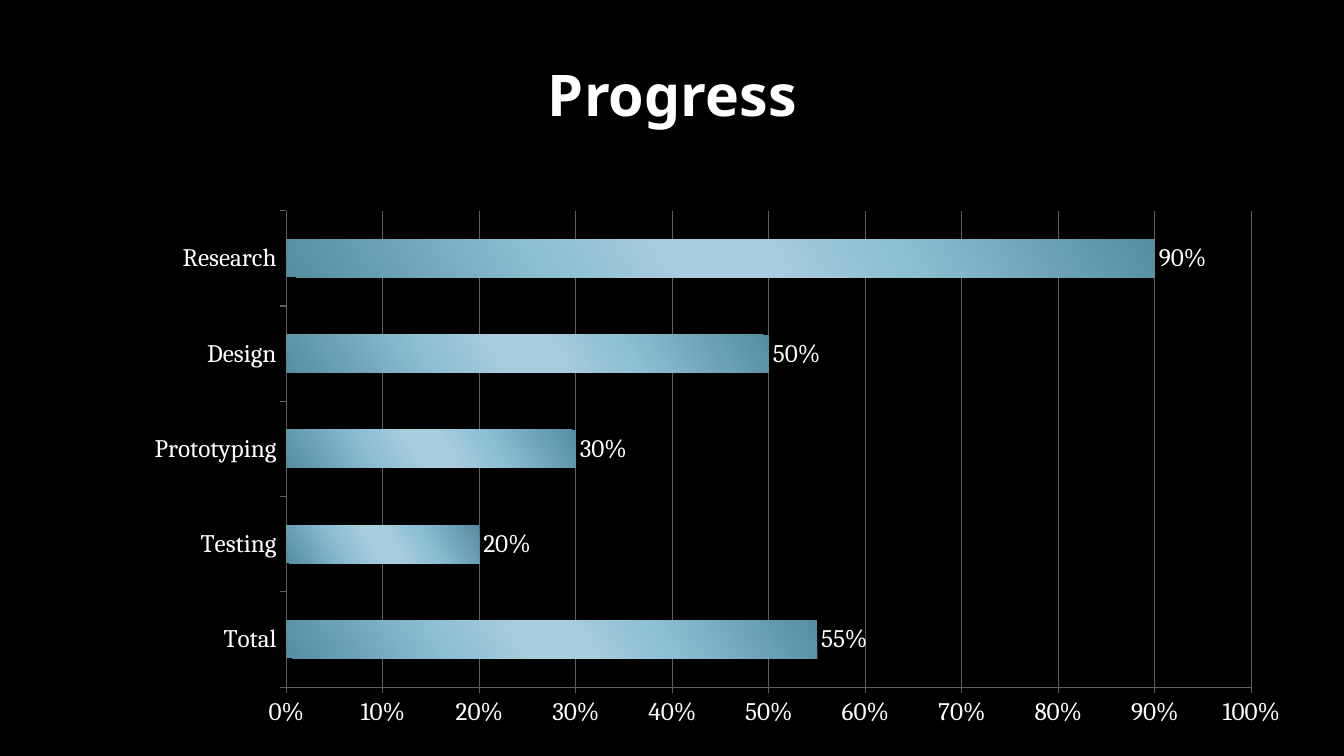
from lxml import etree
from pptx import Presentation
from pptx import util as u
from pptx.chart.data import CategoryChartData
from pptx.dml.color import RGBColor
from pptx.enum import chart as charts, text
from pptx.oxml import parse_xml
from pptx.oxml.ns import nsdecls, qn

BLACK = RGBColor(0x00, 0x00, 0x00)
WHITE = RGBColor(0xFF, 0xFF, 0xFF)
GRID = RGBColor(0x60, 0x60, 0x60)
BAR_EDGE = RGBColor(0x55, 0x8D, 0xA1)
BAR_MIDDLE = RGBColor(0x8D, 0xBF, 0xD3)
BAR_CENTRE = RGBColor(0xA8, 0xCC, 0xDD)

STAGES = {"Total": 0.55, "Testing": 0.2, "Prototyping": 0.3, "Design": 0.5, "Research": 0.9}
BAR_STOPS = [(0, BAR_EDGE), (30, BAR_MIDDLE), (45, BAR_CENTRE),
             (55, BAR_CENTRE), (70, BAR_MIDDLE), (100, BAR_EDGE)]
BAR_ANGLE = 330


def add_title(page, left, top, width, height):
    box = page.shapes.add_textbox(*map(u.Inches, (left, top, width, height)))
    frame = box.text_frame
    frame.word_wrap = True
    frame.vertical_anchor = text.MSO_ANCHOR.MIDDLE
    para = frame.paragraphs[0]
    para.text = "Progress"
    para.alignment = text.PP_ALIGN.CENTER
    font = para.font
    font.name, font.size, font.bold = "Noto Sans", u.Pt(41), True
    font.color.rgb = WHITE


def set_plot_area(chart, x, y, width, height):
    plot_area = chart.plots[0]._element.getparent()
    for old in plot_area.findall(qn("c:layout")):
        plot_area.remove(old)
    layout = parse_xml(f"<c:layout {nsdecls('c')}/>")
    manual = etree.SubElement(layout, qn("c:manualLayout"))
    settings = {"layoutTarget": "inner", "xMode": "edge", "yMode": "edge",
                "x": x, "y": y, "w": width, "h": height}
    for name, value in settings.items():
        etree.SubElement(manual, qn(f"c:{name}")).set("val", str(value))
    plot_area.insert(0, layout)


def shade_bars(series):
    fill = series.format.fill
    fill.gradient()
    fill.gradient_angle = 0
    gradient = series._element.spPr.find(qn("a:gradFill"))
    stops = gradient.find(qn("a:gsLst"))
    for stop in list(stops):
        stops.remove(stop)
    for percent, colour in BAR_STOPS:
        stop = etree.SubElement(stops, qn("a:gs"), pos=str(percent * 1000))
        etree.SubElement(stop, qn("a:srgbClr"), val=str(colour))
    direction = gradient.find(qn("a:lin"))
    direction.set("ang", str(BAR_ANGLE * 60000))
    direction.set("scaled", "0")


def add_progress_chart(page, left, top, width, height):
    data = CategoryChartData(number_format="0%")
    data.categories = list(STAGES)
    data.add_series("Series 1", list(STAGES.values()))
    chart = page.shapes.add_chart(
        charts.XL_CHART_TYPE.BAR_CLUSTERED,
        *map(u.Inches, (left, top, width, height)), data).chart
    chart.has_legend = False
    chart.has_title = False
    chart.font.name, chart.font.size = "Cambria", u.Pt(18)
    chart.font.color.rgb = WHITE
    set_plot_area(chart, 0.181, 0.12, 0.78, 0.797)

    # Axes and gridlines
    values, stages = chart.value_axis, chart.category_axis
    values.minimum_scale, values.maximum_scale, values.major_unit = 0, 1, 0.1
    values.tick_labels.number_format = "0%"
    values.tick_labels.number_format_is_linked = False
    values.has_major_gridlines = True
    stages.has_major_gridlines = False
    for axis in (values, stages):
        axis.major_tick_mark = charts.XL_TICK_MARK.OUTSIDE
        axis.minor_tick_mark = charts.XL_TICK_MARK.NONE
    for part in (values, stages, values.major_gridlines):
        part.format.line.color.rgb = GRID
        part.format.line.width = u.Pt(0.75)

    # Bars and their labels
    plot = chart.plots[0]
    plot.gap_width = 150
    plot.vary_by_categories = False
    shade_bars(plot.series[0])
    plot.has_data_labels = True
    labels = plot.data_labels
    labels.show_value = True
    labels.number_format = "0%"
    labels.number_format_is_linked = False
    labels.position = charts.XL_LABEL_POSITION.OUTSIDE_END


def main():
    deck = Presentation()
    deck.slide_width, deck.slide_height = u.Inches(13.33), u.Inches(7.5)
    page = deck.slides.add_slide(deck.slide_layouts[6])
    page.background.fill.solid()
    page.background.fill.fore_color.rgb = BLACK
    add_title(page, 0.67, 0.3, 12, 1.25)
    add_progress_chart(page, 0.62, 1.38, 12.27, 5.93)
    deck.save("out.pptx")


if __name__ == "__main__":
    main()
